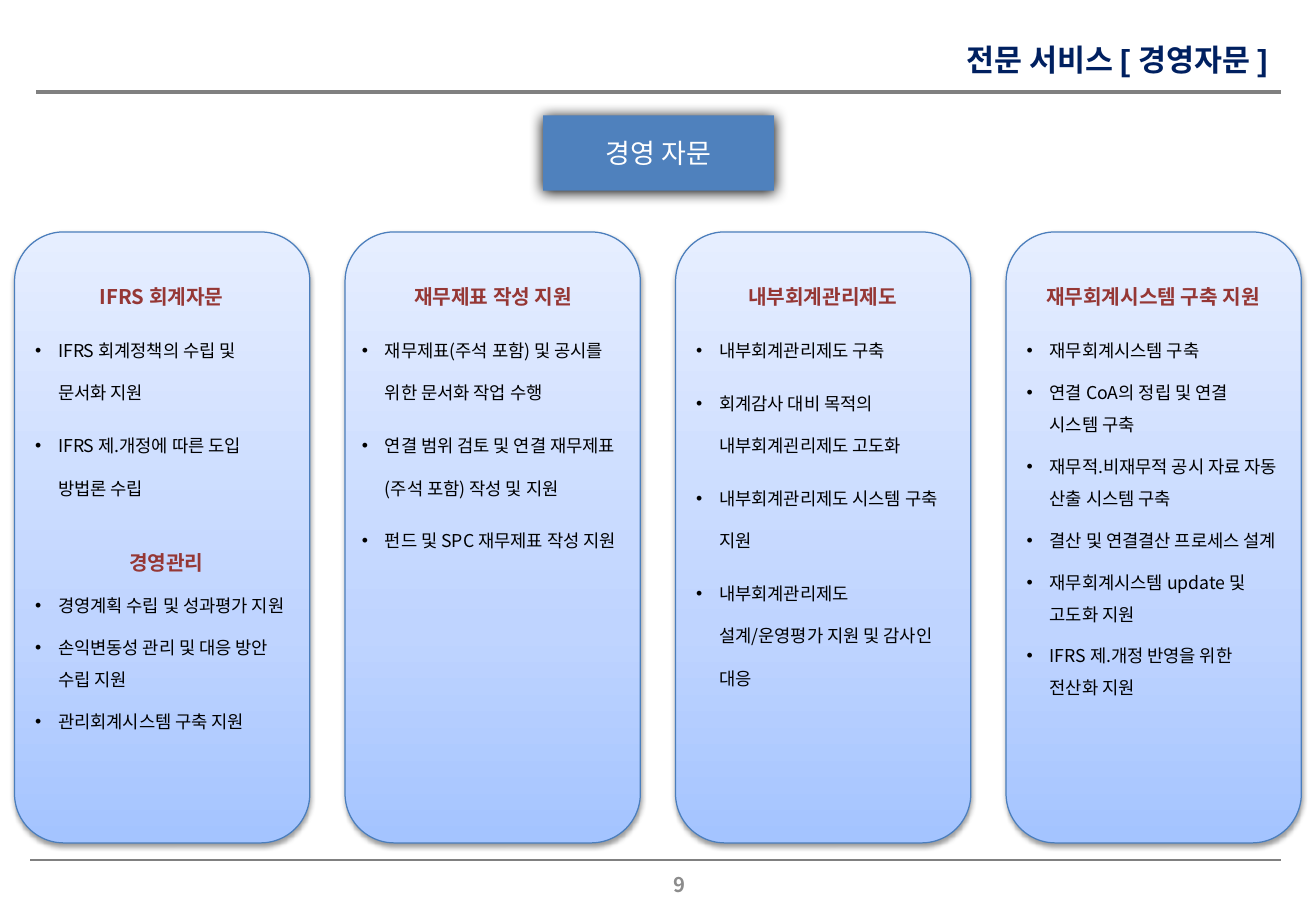
from copy import deepcopy
from dataclasses import dataclass

from lxml import etree
from pptx import Presentation
from pptx import util as u
from pptx.dml.color import RGBColor
from pptx.enum import shapes, text
from pptx.oxml.ns import qn


@dataclass(frozen=True)
class Theme:
    """Colours, fonts and type sizes of the deck."""
    rule: str = "808080"
    title: str = "002060"
    banner: str = "4F81BD"
    banner_text: str = "FFFFFF"
    heading: str = "953735"
    body: str = "000000"
    number: str = "8C8C8C"
    card_line: str = "4B7EBC"
    card_stops: tuple = ((0, "A4C4FF"), (0.35, "BFD4FF"), (1, "E6EEFF"))
    font: str = "Noto Sans CJK KR"
    title_font: str = "Arial"
    title_size: float = 18
    banner_size: float = 16
    heading_size: float = 12
    body_size: float = 10.5


@dataclass(frozen=True)
class Topic:
    """A heading with bullets, placed in one column of the grid."""
    column: int
    heading: str
    bullets: tuple
    spacings: tuple
    top: float = 2.09
    inset: float = 0.07
    width: float = 2.28
    height: float = 4


THEME = Theme()
WIDTH, HEIGHT = 10.83, 7.5
CARD_LEFT, CARD_TOP, CARD_WIDTH, CARD_HEIGHT = 0.12, 1.91, 2.43, 5.03
COLUMNS, PITCH = 4, 2.72
INDENT = 0.19

TOPICS = (
    Topic(0, "IFRS 회계자문",
          ("IFRS 회계정책의 수립 및\v문서화 지원", "IFRS 제.개정에 따른 도입 방법론 수립"),
          (2, 2), height=2.03),
    Topic(0, "경영관리",
          ("경영계획 수립 및 성과평가 지원", "손익변동성 관리 및 대응 방안 수립 지원",
           "관리회계시스템 구축 지원"),
          (1.5, 1.5, 1.5), top=4.28, width=2.36, height=2.05),
    Topic(1, "재무제표 작성 지원",
          ("재무제표(주석 포함) 및 공시를 위한 문서화 작업 수행",
           "연결 범위 검토 및 연결 재무제표(주석 포함) 작성 및 지원",
           "펀드 및 SPC 재무제표 작성 지원"),
          (2, 2, 2), inset=0.04, width=2.36, height=2.82),
    Topic(2, "내부회계관리제도",
          ("내부회계관리제도 구축", "회계감사 대비 목적의 내부회계괸리제도 고도화",
           "내부회계관리제도 시스템 구축 지원",
           "내부회계관리제도 설계/운영평가 지원 및 감사인 대응"),
          (2, 2, 2, 2), height=3.26),
    Topic(3, "재무회계시스템 구축 지원",
          ("재무회계시스템 구축", "연결 CoA의 정립 및 연결 시스템 구축",
           "재무적.비재무적 공시 자료 자동 산출 시스템 구축",
           "결산 및 연결결산 프로세스 설계", "재무회계시스템 update 및 고도화 지원",
           "IFRS 제.개정 반영을 위한 전산화 지원"),
          (2, 1.5, 1.5, 1.5, 1.5, 1.5), height=3.98),
)


def inches(*lengths):
    """Turn lengths in inches into a list of slide units."""
    return [u.Inches(length) for length in lengths]


def column_left(column):
    """Return the left edge of a card column."""
    return CARD_LEFT + column * PITCH


def write(para, words, size, colour, bold=False, font=THEME.font,
          align=text.PP_ALIGN.CENTER):
    """Fill a paragraph and format its runs and line breaks."""
    para.text = words
    para.alignment = align
    for span in para.runs:
        span.font.size = u.Pt(size)
        span.font.bold = bold
        span.font.name = font
        span.font.color.rgb = RGBColor.from_string(colour)
        east_asian = etree.SubElement(span.font._element, qn("a:ea"))
        east_asian.set("typeface", THEME.font)
    for line_break in para._p.findall(qn("a:br")):
        line_break.append(deepcopy(para.runs[0].font._element))


def add_bullet(para):
    """Give a paragraph a hanging round bullet."""
    properties = para._p.get_or_add_pPr()
    properties.set("marL", str(u.Inches(INDENT)))
    properties.set("indent", str(-u.Inches(INDENT)))
    etree.SubElement(properties, qn("a:buFont")).set("typeface", "Arial")
    etree.SubElement(properties, qn("a:buChar")).set("char", "•")


def add_shadow(shape, opacity, blur, distance):
    """Cast a black shadow straight down from a shape."""
    shape.shadow.inherit = False
    effects = shape._element.spPr.find(qn("a:effectLst"))
    shadow = etree.SubElement(effects, qn("a:outerShdw"), {
        "blurRad": str(u.Pt(blur)), "dist": str(u.Pt(distance)),
        "dir": "5400000", "algn": "ctr", "rotWithShape": "0"})
    colour = etree.SubElement(shadow, qn("a:srgbClr"), val="000000")
    etree.SubElement(colour, qn("a:alpha"), val=str(opacity * 1000))


def add_rule(page, left, top, weight):
    """Draw a grey horizontal rule to the right margin."""
    rule = page.shapes.add_connector(
        shapes.MSO_CONNECTOR.STRAIGHT, *inches(left, top, 10.54, top))
    rule.line.color.rgb = RGBColor.from_string(THEME.rule)
    rule.line.width = u.Pt(weight)
    etree.SubElement(rule._element.spPr, qn("a:effectLst"))


def add_card(page, column):
    """Draw the rounded gradient card of a column."""
    card = page.shapes.add_shape(
        shapes.MSO_SHAPE.ROUNDED_RECTANGLE,
        *inches(column_left(column), CARD_TOP, CARD_WIDTH, CARD_HEIGHT))
    card.fill.gradient()
    card.fill.gradient_angle = 90
    stop_list = card._element.spPr.find(qn("a:gradFill")).find(qn("a:gsLst"))
    stop_list.insert(1, deepcopy(stop_list[0]))
    for stop, (position, colour) in zip(card.fill.gradient_stops, THEME.card_stops):
        stop.position = position
        stop.color.rgb = RGBColor.from_string(colour)
    card.line.color.rgb = RGBColor.from_string(THEME.card_line)
    card.line.width = u.Pt(0.75)
    add_shadow(card, 38, 3.1, 1.6)


def add_topic(page, topic):
    """Write a heading and its bullets over a card."""
    box = page.shapes.add_textbox(*inches(
        column_left(topic.column) + topic.inset, topic.top, topic.width, topic.height))
    frame = box.text_frame
    frame.word_wrap = True
    frame.auto_size = text.MSO_AUTO_SIZE.SHAPE_TO_FIT_TEXT
    heading = frame.paragraphs[0]
    heading.line_spacing = 2.0
    heading.space_after = u.Pt(6)
    write(heading, topic.heading, THEME.heading_size, THEME.heading, bold=True)
    for words, spacing in zip(topic.bullets, topic.spacings):
        para = frame.add_paragraph()
        add_bullet(para)
        para.line_spacing = float(spacing)
        para.space_after = u.Pt(6)
        write(para, words, THEME.body_size, THEME.body, align=text.PP_ALIGN.LEFT)


def add_title(page):
    """Place and format the title placeholder."""
    title = page.shapes.title
    title.left, title.top, title.width, title.height = inches(6.76, 0.29, 3.77, 0.4)
    title.text_frame.vertical_anchor = text.MSO_ANCHOR.TOP
    title.text_frame.auto_size = text.MSO_AUTO_SIZE.NONE
    write(title.text_frame.paragraphs[0], "전문 서비스 [ 경영자문 ]", THEME.title_size,
          THEME.title, True, THEME.title_font, text.PP_ALIGN.RIGHT)


def add_banner(page):
    """Draw the blue box that names the service."""
    banner = page.shapes.add_shape(
        shapes.MSO_SHAPE.RECTANGLE, *inches(4.47, 0.95, 1.9, 0.62))
    banner.fill.solid()
    banner.fill.fore_color.rgb = RGBColor.from_string(THEME.banner)
    banner.line.fill.background()
    add_shadow(banner, 100, 8.5, 1)
    banner.text_frame.vertical_anchor = text.MSO_ANCHOR.MIDDLE
    write(banner.text_frame.paragraphs[0], "경영 자문", THEME.banner_size,
          THEME.banner_text)


def add_page_number(page):
    """Write the page number below the bottom rule."""
    box = page.shapes.add_textbox(*inches(3.88, 7.08, 3.43, 0.4))
    box.text_frame.word_wrap = True
    box.text_frame.vertical_anchor = text.MSO_ANCHOR.MIDDLE
    write(box.text_frame.paragraphs[0], "9", THEME.heading_size, THEME.number, True)


def main():
    """Build and save the slide."""
    deck = Presentation()
    deck.slide_width, deck.slide_height = inches(WIDTH, HEIGHT)
    page = deck.slides.add_slide(deck.slide_layouts.get_by_name("Title Only"))
    add_rule(page, 0.3, 0.76, 2.25)
    add_rule(page, 0.25, 7.08, 1.5)
    for column in range(COLUMNS):
        add_card(page, column)
    add_page_number(page)
    add_title(page)
    add_banner(page)
    for topic in TOPICS:
        add_topic(page, topic)
    deck.save("out.pptx")


if __name__ == "__main__":
    main()
